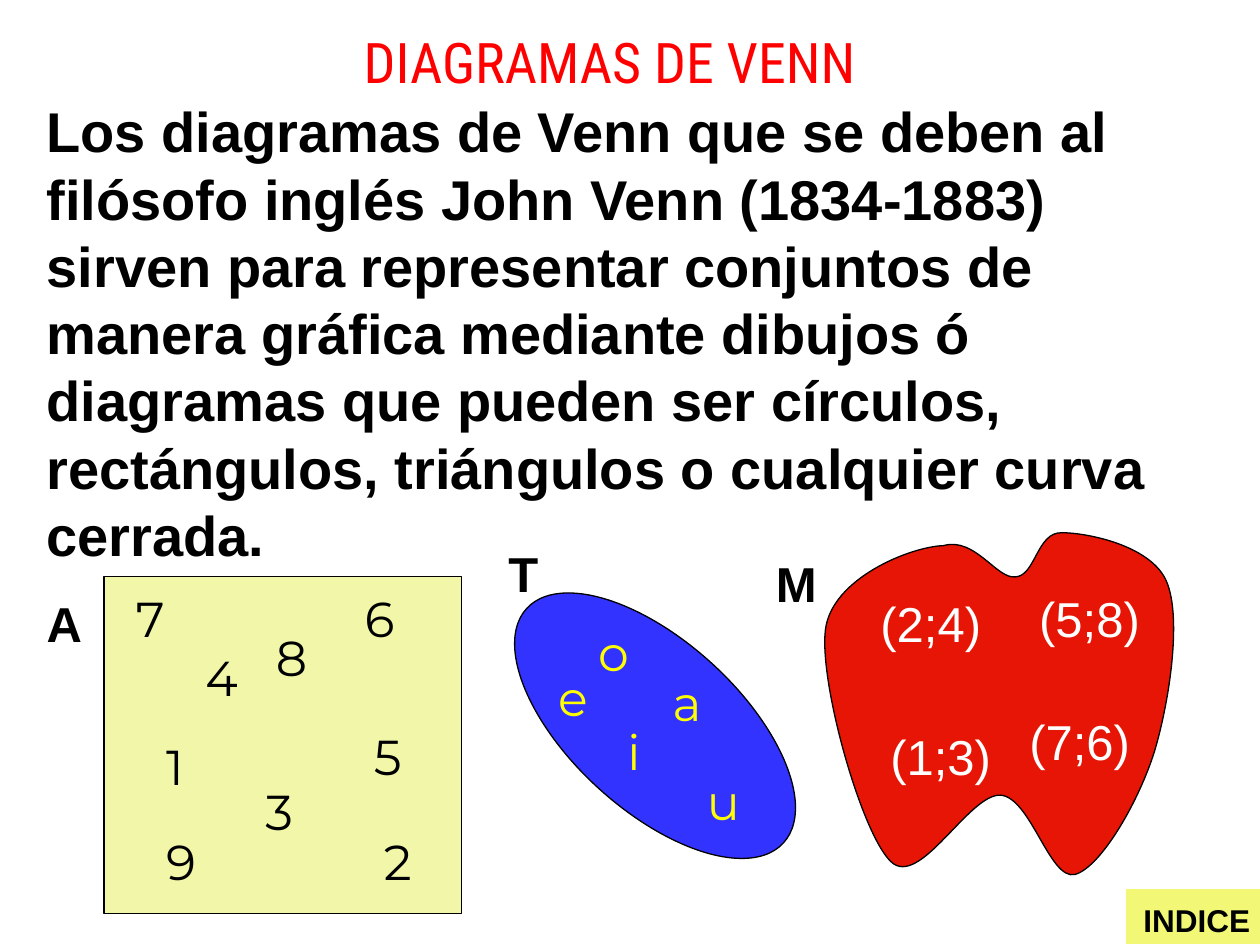
from lxml import etree
from pptx import Presentation
from pptx.dml.color import RGBColor
from pptx.enum.shapes import MSO_SHAPE
from pptx.enum.text import PP_ALIGN
from pptx.oxml.ns import qn
from pptx.util import Cm, Pt

RECTANGLE = MSO_SHAPE.RECTANGLE
ELLIPSE = MSO_SHAPE.OVAL
BUTTON = MSO_SHAPE.ACTION_BUTTON_CUSTOM
LEFT, CENTER = PP_ALIGN.LEFT, PP_ALIGN.CENTER

COLORS = {
    "title": "FF0000",
    "text": "000000",
    "outline": "000000",
    "numbers": "F2F6A8",
    "vowels": "3333FF",
    "vowel_text": "FFFF00",
    "pairs": "E71505",
    "pair_text": "FFFFFF",
    "button": "F2F876",
}

BODY = (
    "Los diagramas de Venn que se deben al filósofo inglés John Venn "
    "(1834-1883) sirven para representar conjuntos de manera gráfica mediante "
    "dibujos ó diagramas que pueden ser círculos, rectángulos, triángulos o "
    "cualquier curva cerrada."
)

# Label positions: text, left, top in cm
SET_NAMES = [("A", 0.69, 11.83), ("M", 15.39, 11.03), ("T", 10, 10.83)]
NUMBERS = [
    ("7", 2.49, 11.73), ("6", 7.1, 11.73), ("8", 5.31, 12.52),
    ("4", 3.89, 12.93), ("1", 3.1, 14.73), ("5", 7.29, 14.53),
    ("3", 5.1, 15.62), ("9", 3.1, 16.63), ("2", 7.49, 16.63),
]
VOWELS = [
    ("o", 11.81, 12.42), ("e", 11, 13.33), ("a", 13.31, 13.43),
    ("i", 12.4, 14.43), ("u", 14, 15.42),
]
PAIRS = [
    ("(2;4)", 17.5, 11.83), ("(5;8)", 20.7, 11.73),
    ("(1;3)", 17.7, 14.53), ("(7;6)", 20.5, 14.22),
]

# Closed curve of set M: two control points and an end point per segment, in cm
CURVE_START = (19.02, 11)
CURVE = [
    ((19.66, 10.82), (20.09, 11.68), (20.47, 11.63)),
    ((20.88, 11.61), (20.9, 10.72), (21.41, 10.74)),
    ((21.92, 10.74), (23.22, 11), (23.52, 11.73)),
    ((23.83, 12.47), (23.57, 14.17), (23.27, 15.16)),
    ((22.96, 16.15), (22.2, 17.48), (21.67, 17.63)),
    ((21.16, 17.75), (20.78, 16.08), (20.17, 16.03)),
    ((19.53, 16), (18.54, 17.93), (17.96, 17.37)),
    ((17.37, 16.81), (16.51, 13.77), (16.64, 12.7)),
    ((16.76, 11.66), (18.36, 11.02), CURVE_START),
]


def color(name):
    return RGBColor.from_string(COLORS[name])


def add_text(page, text, left, top, width, height, *, size=28, font="Arial",
             fill="text", bold=False, align=LEFT, wrap=True):
    box = page.shapes.add_textbox(Cm(left), Cm(top), Cm(width), Cm(height))
    box.text_frame.word_wrap = wrap
    para = box.text_frame.paragraphs[0]
    para.alignment = align
    span = para.add_run()
    span.text = text
    span.font.size = Pt(size)
    span.font.name = font
    span.font.bold = bold
    span.font.color.rgb = color(fill)


def add_labels(page, labels, width, **text_format):
    for text, left, top in labels:
        add_text(page, text, left, top, width, 1.45, **text_format)


def paint(shape, fill, outlined=True):
    shape.shadow.inherit = False
    shape.fill.solid()
    shape.fill.fore_color.rgb = color(fill)
    if outlined:
        shape.line.color.rgb = color("outline")
        shape.line.width = Pt(0.75)
    else:
        shape.line.fill.background()


def add_preset(page, kind, left, top, width, height, fill, *,
               rotation=0, outlined=True):
    shape = page.shapes.add_shape(kind, Cm(left), Cm(top), Cm(width), Cm(height))
    shape.rotation = rotation
    paint(shape, fill, outlined)


def add_curve(page, start, segments, fill):
    builder = page.shapes.build_freeform(Cm(start[0]), Cm(start[1]))
    points = [(Cm(x), Cm(y)) for segment in segments for x, y in segment]
    builder.add_line_segments(points, close=True)
    shape = builder.convert_to_shape()
    # Turn every three straight steps into one Bezier segment
    steps = list(shape.element.iter(qn("a:lnTo")))
    for first in range(0, len(steps), 3):
        bezier = etree.Element(qn("a:cubicBezTo"))
        steps[first].addprevious(bezier)
        for step in steps[first:first + 3]:
            bezier.append(step[0])
            step.getparent().remove(step)
    paint(shape, fill)


def main():
    deck = Presentation()
    deck.slide_width, deck.slide_height = Cm(25.4), Cm(19.05)
    page = deck.slides.add_slide(deck.slide_layouts[6])

    # Title and explanation
    add_text(page, "DIAGRAMAS DE VENN", 3.29, 0.43, 18.01, 1.4, size=32,
             font="Roboto Condensed", fill="title", align=CENTER, wrap=False)
    add_text(page, BODY, 0.69, 1.83, 24, 9.73, size=32, bold=True)

    # Outlines of the three sets
    add_preset(page, RECTANGLE, 2.1, 11.62, 7.21, 6.8, "numbers")
    add_preset(page, ELLIPSE, 9.7, 12.93, 7.01, 3.4, "vowels", rotation=42.4)
    add_curve(page, CURVE_START, CURVE, "pairs")

    # Set names and elements
    add_labels(page, SET_NAMES, 1.6, bold=True)
    add_labels(page, NUMBERS, 1, font="Montserrat")
    add_labels(page, VOWELS, 1, font="Montserrat", fill="vowel_text")
    add_labels(page, PAIRS, 2.6, fill="pair_text")

    # Index button
    add_preset(page, BUTTON, 22.7, 17.93, 2.7, 1.1, "button", outlined=False)
    add_text(page, "INDICE", 22.8, 18.03, 3.1, 1.02, size=18, bold=True)

    deck.save("out.pptx")


if __name__ == "__main__":
    main()
